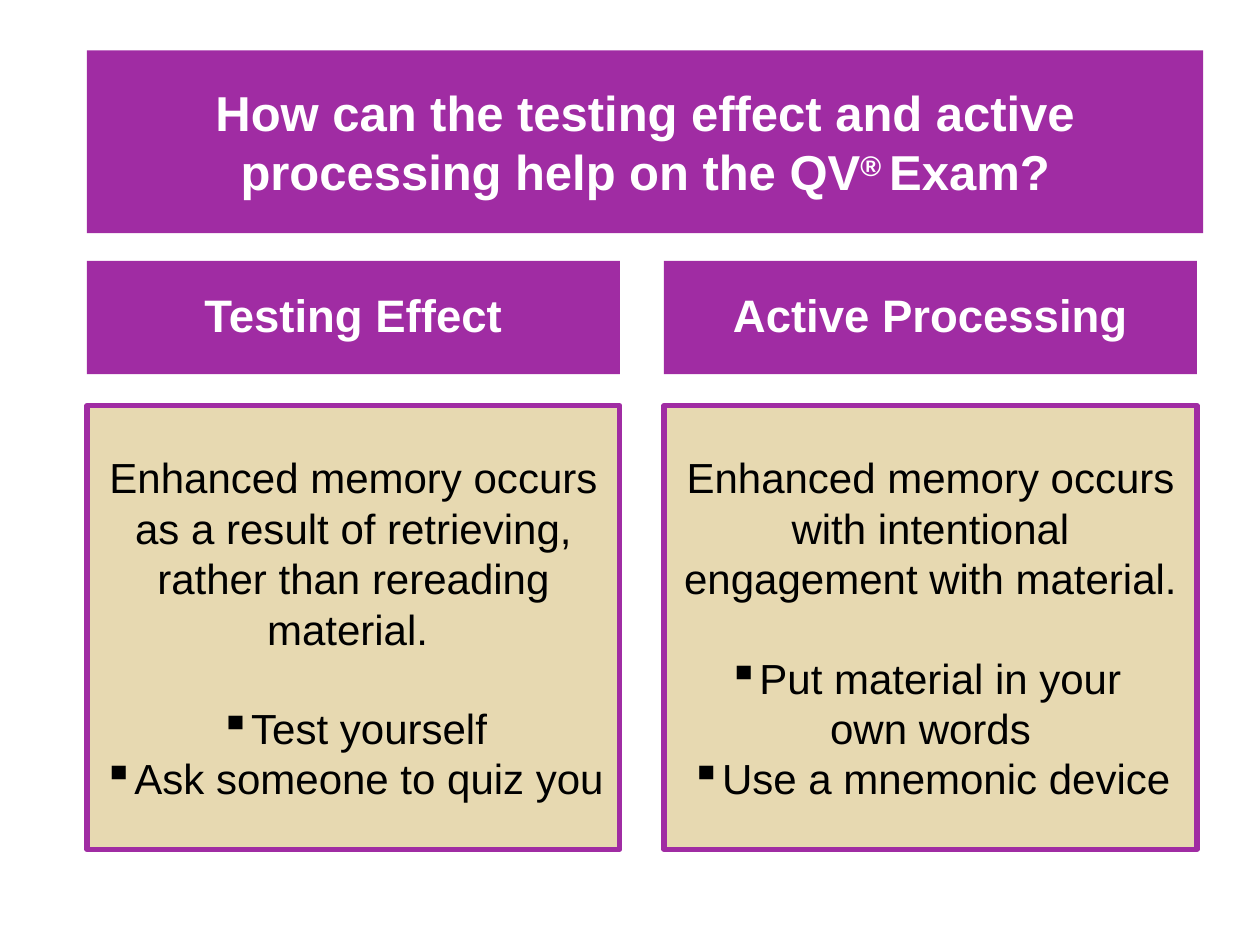
from pptx import Presentation
from pptx.dml.color import RGBColor
from pptx.enum.shapes import MSO_SHAPE
from pptx.enum.text import MSO_ANCHOR, PP_ALIGN
from pptx.oxml.xmlchemy import OxmlElement
from pptx.util import Inches, Pt

RECTANGLE = MSO_SHAPE.RECTANGLE
MIDDLE = MSO_ANCHOR.MIDDLE
CENTER = PP_ALIGN.CENTER

PURPLE = RGBColor(0xA0, 0x2C, 0xA3)
SAND = RGBColor(0xE7, 0xD9, 0xB1)
WHITE = RGBColor(0xFF, 0xFF, 0xFF)
BLACK = RGBColor(0x00, 0x00, 0x00)

# Grid in inches
LEFT, COLUMN_WIDTH, COLUMN_STEP = 0.69, 4.23, 4.58
TITLE_WIDTH = 8.86
ROWS = {"title": (0.4, 1.45), "heading": (2.07, 0.9), "body": (3.22, 3.52)}
BULLET_INDENT = 0.19

# Heading, introduction, then (text, has a bullet) lines
COLUMNS = [
    ("Testing Effect",
     "Enhanced memory occurs as a result of retrieving, "
     "rather than rereading material. ",
     [("Test yourself", True), ("Ask someone to quiz you", True)]),
    ("Active Processing",
     "Enhanced memory occurs with intentional engagement with material.",
     [("Put material in your ", True), ("own words", False),
      ("Use a mnemonic device", True)]),
]


class SlideBuilder:
    font_name = "Arial"

    def __init__(self, page):
        self.page = page

    def panel(self, column, row, fill, width=COLUMN_WIDTH):
        top, height = ROWS[row]
        box = self.page.shapes.add_shape(
            RECTANGLE, Inches(LEFT + column * COLUMN_STEP), Inches(top),
            Inches(width), Inches(height))
        box.shadow.inherit = False
        box.fill.solid()
        box.fill.fore_color.rgb = fill
        box.line.fill.background()
        box.text_frame.word_wrap = True
        box.text_frame.vertical_anchor = MIDDLE
        return box

    def format(self, para, size, color, bold=False):
        para.alignment = CENTER
        for span in para.runs:
            span.font.name = self.font_name
            span.font.size = Pt(size)
            span.font.bold = bold
            span.font.color.rgb = color

    def bullet(self, para):
        properties = para._p.get_or_add_pPr()
        properties.set("marL", str(Inches(BULLET_INDENT)))
        properties.set("indent", str(-Inches(BULLET_INDENT)))
        mark = OxmlElement("a:buChar")
        mark.set("char", "▪")
        properties.append(mark)

    def title(self, before, raised, after):
        box = self.panel(0, "title", PURPLE, TITLE_WIDTH)
        para = box.text_frame.paragraphs[0]
        for text in (before, raised, after):
            para.add_run().text = text
        self.format(para, 28, WHITE, bold=True)
        para.runs[1].font._element.set("baseline", "30000")

    def heading(self, column, text):
        box = self.panel(column, "heading", PURPLE)
        box.text_frame.text = text
        para = box.text_frame.paragraphs[0]
        para.line_spacing = 0.9
        para.space_before = Pt(7.5)
        self.format(para, 26, WHITE, bold=True)

    def body(self, column, introduction, lines):
        box = self.panel(column, "body", SAND)
        box.line.color.rgb = PURPLE
        box.line.width = Pt(3)
        frame = box.text_frame
        frame.text = introduction
        frame.paragraphs[0].space_after = Pt(28)
        for text, bulleted in lines:
            para = frame.add_paragraph()
            para.text = text
            if bulleted:
                self.bullet(para)
        for para in frame.paragraphs:
            self.format(para, 24, BLACK)


def main():
    deck = Presentation()
    deck.slide_width, deck.slide_height = Inches(10), Inches(7.5)
    builder = SlideBuilder(deck.slides.add_slide(deck.slide_layouts[6]))

    # Title band
    builder.title("How can the testing effect and active processing help on the QV",
                  "® ", "Exam?")

    # Two columns, each a heading over a body
    for column, (heading, introduction, lines) in enumerate(COLUMNS):
        builder.heading(column, heading)
        builder.body(column, introduction, lines)

    deck.save("out.pptx")


if __name__ == "__main__":
    main()
